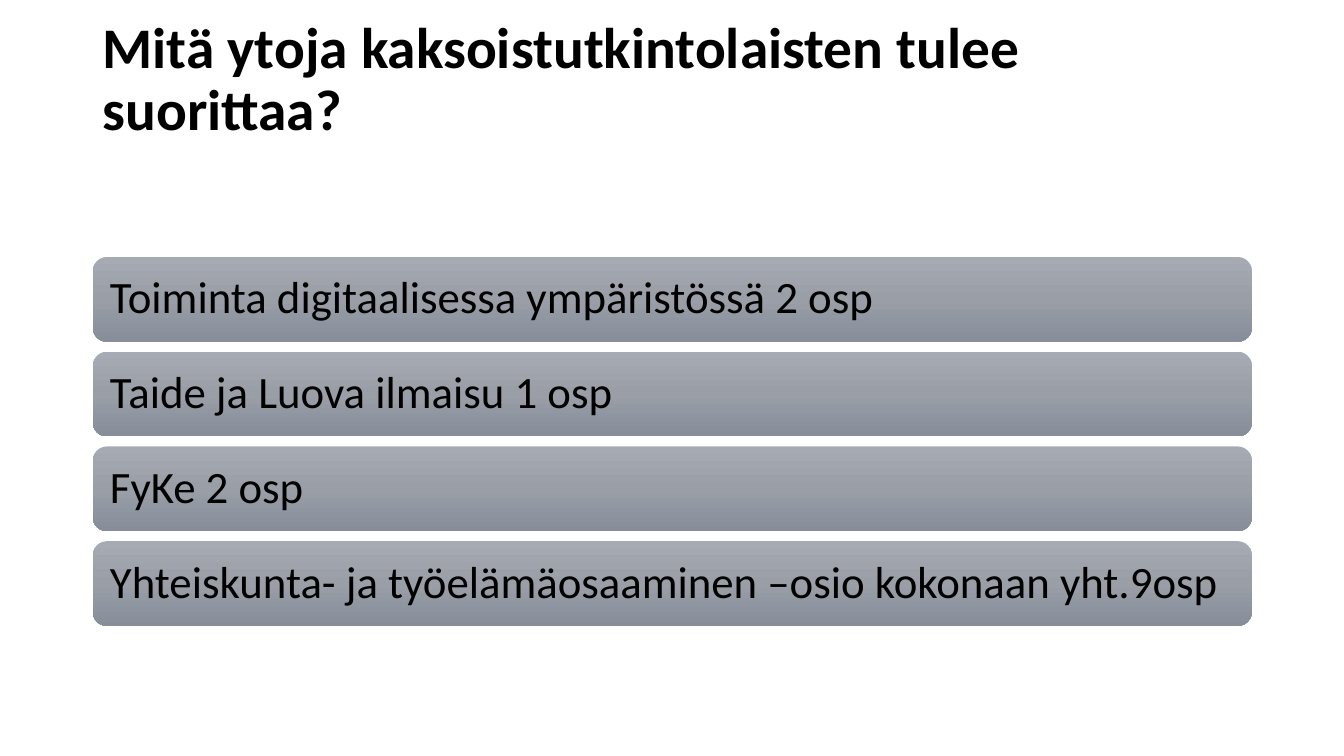
import copy
from dataclasses import dataclass

import pptx
import pptx.dml.color
import pptx.enum.shapes
import pptx.enum.text
import pptx.oxml.ns
import pptx.util

Inches = pptx.util.Inches
Pt = pptx.util.Pt
RGB = pptx.dml.color.RGBColor

WIDE, HIGH = Inches(13.33), Inches(7.5)
BLACK = RGB(0x00, 0x00, 0x00)
LIGHT = RGB(0xA5, 0xAA, 0xB3)
MIDDLE = RGB(0x99, 0x9E, 0xA7)
DARK = RGB(0x87, 0x8E, 0x9A)
FONT = "Calibri"

# Percent of the slide's width or height
LEFT, SPAN = 6.9, 86.25
FIRST, PITCH, TALL = 34, 12.53, 11.2

TITLE = "Mitä ytoja kaksoistutkintolaisten tulee suorittaa?"
UNITS = [
    "Toiminta digitaalisessa ympäristössä 2 osp",
    "Taide ja Luova ilmaisu 1 osp",
    "FyKe 2 osp",
    "Yhteiskunta- ja työelämäosaaminen –osio kokonaan yht.9osp",
]


@dataclass
class Bar:
    text: str
    row: int

    @property
    def top(self) -> float:
        return FIRST + self.row * PITCH


def place(top: float, tall: float) -> tuple[int, int, int, int]:
    """Turn a row's percentages into left, top, width and height."""
    return (int(WIDE * LEFT / 100), int(HIGH * top / 100),
            int(WIDE * SPAN / 100), int(HIGH * tall / 100))


def write(shape, text: str, size: float, bold: bool = False) -> None:
    frame = shape.text_frame
    frame.text = text
    frame.word_wrap = True
    frame.auto_size = pptx.enum.text.MSO_AUTO_SIZE.NONE
    frame.vertical_anchor = pptx.enum.text.MSO_ANCHOR.MIDDLE
    line = frame.paragraphs[0]
    line.alignment = pptx.enum.text.PP_ALIGN.LEFT
    line.line_spacing = 0.9
    font = line.runs[0].font
    font.name, font.size, font.bold = FONT, Pt(size), bold
    font.color.rgb = BLACK


def shade(shape) -> None:
    """Fill with a three-stop gradient from top to bottom."""
    fill = shape.fill
    fill.gradient()
    fill.gradient_angle = 270
    stops = shape.element.spPr.find(".//" + pptx.oxml.ns.qn("a:gsLst"))
    stops.insert(1, copy.deepcopy(stops[0]))
    for stop, color, pos in zip(fill.gradient_stops, (LIGHT, MIDDLE, DARK), (0, 0.5, 1)):
        stop.color.rgb = color
        stop.position = pos


def add_title(slide) -> None:
    box = slide.shapes.add_textbox(*place(5.33, 19.33))
    write(box, TITLE, 41, bold=True)
    box.text_frame.margin_bottom = Inches(0.7)


def add_bar(slide, bar: Bar) -> None:
    kind = pptx.enum.shapes.MSO_SHAPE.ROUNDED_RECTANGLE
    shape = slide.shapes.add_shape(kind, *place(bar.top, TALL))
    shape.shadow.inherit = False
    shape.line.fill.background()
    shade(shape)
    write(shape, bar.text, 32)
    frame = shape.text_frame
    frame.margin_left = frame.margin_right = Inches(0.13)
    frame.margin_top = frame.margin_bottom = Inches(0.13)


def main() -> None:
    deck = pptx.Presentation()
    deck.slide_width, deck.slide_height = WIDE, HIGH
    slide = deck.slides.add_slide(deck.slide_layouts[6])
    add_title(slide)
    for row, text in enumerate(UNITS):
        add_bar(slide, Bar(text, row))
    deck.save("out.pptx")


if __name__ == "__main__":
    main()
